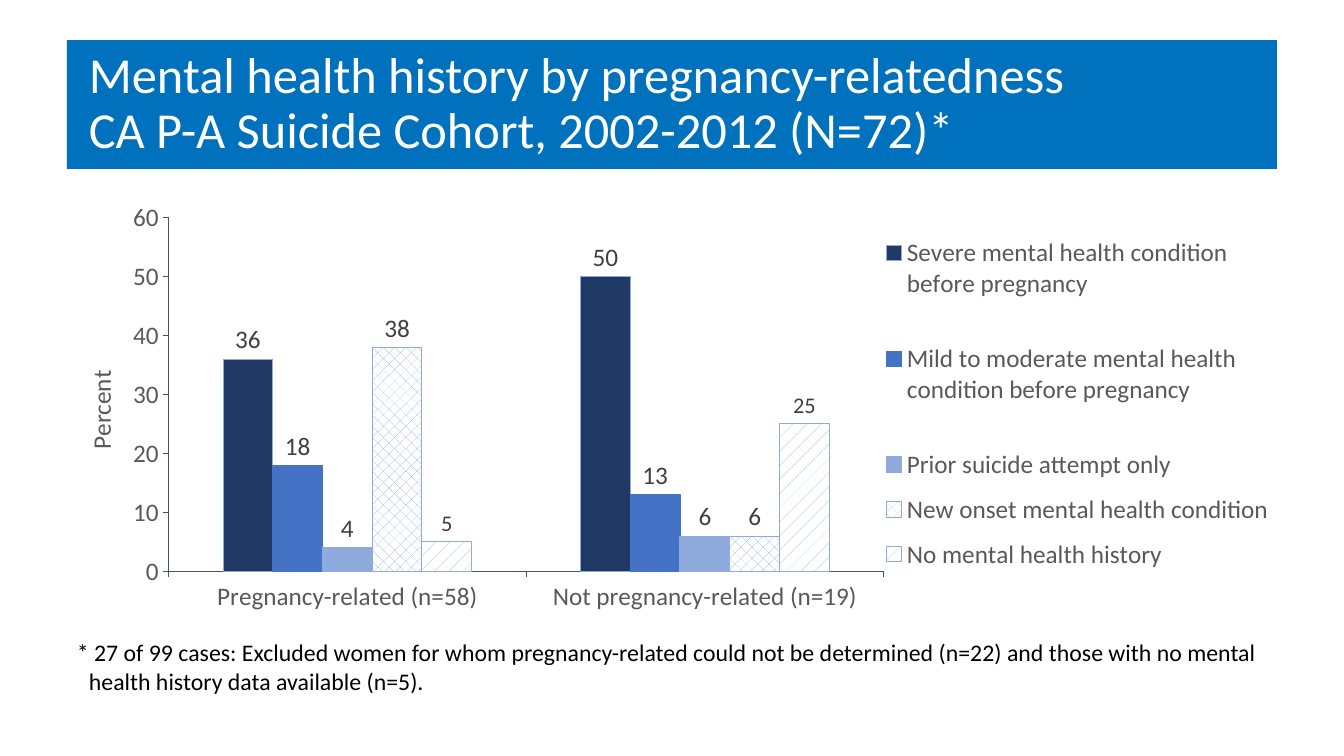
"""Build the slide on mental health history by pregnancy-relatedness."""
from lxml import etree
from pptx import Presentation
from pptx.chart.data import CategoryChartData
from pptx.dml.color import RGBColor
from pptx.enum.chart import XL_CHART_TYPE as ChartType, XL_LABEL_POSITION as LabelPosition
from pptx.enum.chart import XL_LEGEND_POSITION as LegendPosition, XL_TICK_MARK as TickMark
from pptx.enum.dml import MSO_PATTERN as Pattern
from pptx.enum.shapes import MSO_SHAPE as Shape
from pptx.enum.text import MSO_ANCHOR as Anchor, PP_ALIGN as Align
from pptx.oxml.ns import qn
from pptx.util import Pt

COLORS = {
    "banner": "0071BC", "white": "FFFFFF", "black": "000000", "axis": "44546A",
    "gray": "595959", "label": "404040", "navy": "203864", "blue": "4472C4", "light": "8FAADC",
}
TITLE = "Mental health history by pregnancy-relatedness\vCA P-A Suicide Cohort, 2002-2012 (N=72)*"
FOOTNOTE = ("* 27 of 99 cases: Excluded women for whom pregnancy-related could not be determined "
            "(n=22) and those with no mental health history data available (n=5).")
AXIS_TITLE = "Percent"
CATEGORIES = ["Pregnancy-related (n=58)", "Not pregnancy-related (n=19)"]
SERIES = [
    ("Severe mental health condition before pregnancy\n", (36, 50), "navy", "light", 18),
    ("Mild to moderate mental health condition before pregnancy\n", (18, 13), "blue", "blue", 18),
    ("Prior suicide attempt only", (4, 6), "light", "light", 18),
    ("New onset mental health condition", (38, 6), Pattern.PERCENT_25, "light", 18),
    ("No mental health history", (5, 25), Pattern.PERCENT_5, "light", 16),
]
PX = 914400 / 100.8
BANNER_BOX = (67, 40, 1210, 129)
CHART_BOX = (67, 202, 1210, 420)
FOOTNOTE_BOX = (67, 633, 1209, 67)
INDENT = 12
PLOT_LAYOUT = {"x": 0.084, "y": 0.037, "w": 0.591, "h": 0.843}
LEGEND_LAYOUT = {"x": 0.67, "y": 0.05, "w": 0.33, "h": 0.86}
AXIS_TITLE_LAYOUT = {"x": 0.01, "y": 0.39}


def px(length):
    return round(length * PX)


def box(lengths):
    return [px(length) for length in lengths]


def rgb(name):
    return RGBColor.from_string(COLORS[name])


def style(font, size, color):
    font.name, font.size, font.bold = "Calibri", Pt(size), False
    font.color.rgb = rgb(color)


def set_line(line, color):
    line.color.rgb = rgb(color)
    line.width = Pt(0.75)


def set_layout(parent, position, before, inner=False):
    for old in parent.findall(qn("c:layout")):
        parent.remove(old)
    layout = etree.Element(qn("c:layout"))
    manual = etree.SubElement(layout, qn("c:manualLayout"))
    if inner:
        etree.SubElement(manual, qn("c:layoutTarget")).set("val", "inner")
    for key in "xy":
        etree.SubElement(manual, qn(f"c:{key}Mode")).set("val", "edge")
    for key, value in position.items():
        etree.SubElement(manual, qn(f"c:{key}")).set("val", str(value))
    parent.find(qn(before)).addprevious(layout)


def write(shape, text, size, color, margin, hanging):
    frame = shape.text_frame
    frame.word_wrap = True
    frame.text = text
    paragraph = frame.paragraphs[0]
    paragraph.alignment = Align.LEFT
    properties = paragraph._p.get_or_add_pPr()
    properties.set("marL", str(px(margin)))
    properties.set("indent", str(px(hanging)))
    for run in paragraph.runs:
        style(run.font, size, color)
    return frame, paragraph


def add_banner(slide):
    banner = slide.shapes.add_shape(Shape.RECTANGLE, *box(BANNER_BOX))
    banner.shadow.inherit = False
    banner.fill.solid()
    banner.fill.fore_color.rgb = rgb("banner")
    banner.line.fill.background()
    frame, paragraph = write(banner, TITLE, 36, "white", INDENT, 0)
    frame.vertical_anchor = Anchor.MIDDLE
    paragraph.line_spacing = 0.9


def style_series(series, fill, line_color, label_size):
    area = series.format.fill
    if isinstance(fill, str):
        area.solid()
        area.fore_color.rgb = rgb(fill)
    else:
        area.patterned()
        area.pattern = fill
        area.fore_color.rgb = rgb("light")
        area.back_color.rgb = rgb("white")
    set_line(series.format.line, line_color)
    series.invert_if_negative = False
    labels = series.data_labels
    labels.show_value = True
    labels.position = LabelPosition.OUTSIDE_END
    style(labels.font, label_size, "label")


def add_history_chart(slide):
    data = CategoryChartData()
    data.categories = CATEGORIES
    for name, values, *_ in SERIES:
        data.add_series(name, values)
    frame = slide.shapes.add_chart(ChartType.COLUMN_CLUSTERED, *box(CHART_BOX), data)
    chart = frame.chart
    chart.has_title = False
    style(chart.font, 10, "black")
    plot = chart.plots[0]
    plot.gap_width, plot.overlap = 219, 0
    plot.vary_by_categories = False
    for series, (_, _, fill, line_color, size) in zip(plot.series, SERIES):
        style_series(series, fill, line_color, size)

    for axis in (chart.category_axis, chart.value_axis):
        axis.has_major_gridlines = False
        axis.major_tick_mark = TickMark.OUTSIDE
        axis.minor_tick_mark = TickMark.NONE
        style(axis.tick_labels.font, 18, "gray")
        set_line(axis.format.line, "axis")
    values = chart.value_axis
    values.minimum_scale, values.maximum_scale, values.major_unit = 0, 60, 10
    title = values.axis_title
    title.text_frame.text = AXIS_TITLE
    style(title.text_frame.paragraphs[0].runs[0].font, 18, "gray")
    set_layout(title._element, AXIS_TITLE_LAYOUT, "c:overlay")

    chart.has_legend = True
    legend = chart.legend
    legend.position = LegendPosition.RIGHT
    legend.include_in_layout = False
    style(legend.font, 18, "gray")
    set_layout(legend._element, LEGEND_LAYOUT, "c:overlay")
    set_layout(chart._chartSpace.chart.plotArea, PLOT_LAYOUT, "c:barChart", inner=True)


def main():
    presentation = Presentation()
    presentation.slide_width, presentation.slide_height = px(1344), px(756)
    slide = presentation.slides.add_slide(presentation.slide_layouts[6])
    add_banner(slide)
    add_history_chart(slide)
    footnote = slide.shapes.add_textbox(*box(FOOTNOTE_BOX))
    write(footnote, FOOTNOTE, 17, "black", INDENT, -INDENT)
    presentation.save("out.pptx")


if __name__ == "__main__":
    main()
